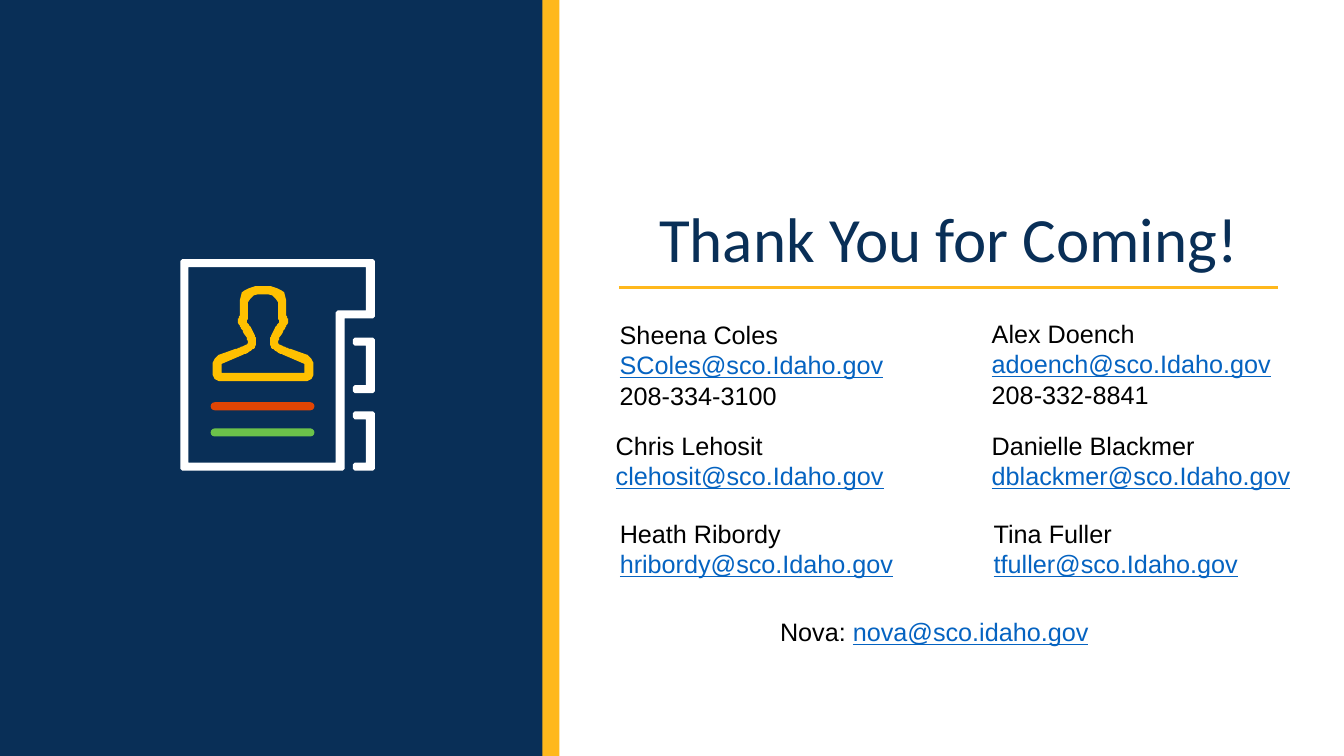
from pptx import Presentation
from pptx.dml.color import RGBColor
from pptx.enum.shapes import MSO_CONNECTOR, MSO_SHAPE
from pptx.enum.text import MSO_ANCHOR, PP_ALIGN
from pptx.oxml.ns import qn
from pptx.util import Emu, Pt
from lxml import etree

PX = 9144  # 100 px to the inch
RECT, PILL = MSO_SHAPE.RECTANGLE, MSO_SHAPE.ROUNDED_RECTANGLE
LINE = MSO_CONNECTOR.STRAIGHT
LEFT, CENTER = PP_ALIGN.LEFT, PP_ALIGN.CENTER
TOP, MIDDLE = MSO_ANCHOR.TOP, MSO_ANCHOR.MIDDLE

NAVY = RGBColor(0x09, 0x2F, 0x57)
GOLD = RGBColor(0xFF, 0xB8, 0x1C)
AMBER = RGBColor(0xFF, 0xC0, 0x00)
RED = RGBColor(0xE1, 0x45, 0x04)
GREEN = RGBColor(0x6C, 0xC2, 0x4A)
WHITE = RGBColor(0xFF, 0xFF, 0xFF)
BLACK = RGBColor(0, 0, 0)
BLUE = RGBColor(0x05, 0x63, 0xC1)

TITLE = "Thank You for Coming!"
# left, top, width, height, lines
PEOPLE = [
    (605, 312, 344, 101, ["Sheena Coles", "SColes@sco.Idaho.gov", "208-334-3100"]),
    (974, 311, 309, 101, ["Alex Doench", "adoench@sco.Idaho.gov", "208-332-8841"]),
    (601, 422, 312, 71, ["Chris Lehosit", "clehosit@sco.Idaho.gov"]),
    (974, 422, 336, 71, ["Danielle Blackmer", "dblackmer@sco.Idaho.gov"]),
    (605, 509, 312, 71, ["Heath Ribordy", "hribordy@sco.Idaho.gov"]),
    (976, 509, 312, 71, ["Tina Fuller", "tfuller@sco.Idaho.gov"]),
    (764, 607, 336, 40, ["Nova: nova@sco.idaho.gov"]),
]

# Outlines: x, y, corner radius
BOOK = [(179, 257, 4), (372, 257, 4), (372, 316, 4), (342, 316, 0),
        (342, 467, 4), (179, 467, 4)]
PAGE = [(187, 265, 0), (363, 265, 0), (363, 308, 0), (333, 308, 4),
        (333, 459, 0), (187, 459, 0)]
TABS = [(335, 390), (408, 467)]
AXIS = 261
# Right half of the bust, from the crown down
BODY = [(284, 284, 21), (284, 313, 3), (287, 319, 5), (282, 327, 4),
        (276, 338, 3), (276, 341, 2), (284, 345, 4), (311, 354, 9),
        (311, 378, 8)]
CORE = [(276, 292, 14), (276, 316, 1), (278, 319, 2), (274, 323, 2),
        (268, 335, 4), (268, 344, 4), (276, 350, 5), (302, 361, 0),
        (302, 370, 0)]
BARS = [(399, RED), (425, GREEN)]


def box(kind, x, y, w, h, color):
    shape = slide.shapes.add_shape(kind, *(Emu(n * PX) for n in (x, y, w, h)))
    shape.shadow.inherit = False
    shape.fill.solid()
    shape.fill.fore_color.rgb = color
    shape.line.fill.background()
    return shape


def write(lines, x, y, w, h, size=18, font="Arial", color=BLACK, align=LEFT,
          anchor=TOP, before=0, space=1.0):
    """Add a text box; words holding an @ are set as addresses."""
    frame = slide.shapes.add_textbox(*(Emu(n * PX) for n in (x, y, w, h))).text_frame
    frame.word_wrap = True
    frame.vertical_anchor = anchor
    for i, line in enumerate(lines):
        para = frame.add_paragraph() if i else frame.paragraphs[0]
        para.alignment = align
        para.space_before = Pt(before)
        para.line_spacing = space
        lead, gap, last = line.rpartition(" ")
        parts = [lead + gap, last] if "@" in last else [line]
        for part in filter(None, parts):
            run = para.add_run()
            run.text = part
            run.font.size = Pt(size)
            run.font.name = font
            mail = "@" in part
            run.font.underline = mail
            run.font.color.rgb = BLUE if mail else color


def curve(points, steps=6):
    """Round each corner of a closed outline by its radius."""
    out = []
    for i, (x, y, r) in enumerate(points):
        if not r:
            out.append((x, y))
            continue
        ends = []
        for px, py, _ in (points[i - 1], points[(i + 1) % len(points)]):
            size = ((px - x) ** 2 + (py - y) ** 2) ** 0.5
            t = min(r / size, 0.5)
            ends.append((x + (px - x) * t, y + (py - y) * t))
        (ax, ay), (bx, by) = ends
        for k in range(steps + 1):
            t = k / steps
            u = 1 - t
            out.append((u * u * ax + 2 * u * t * x + t * t * bx,
                        u * u * ay + 2 * u * t * y + t * t * by))
    return out


def draw(color, *loops):
    first, *rest = [curve(loop) for loop in loops]
    pen = slide.shapes.build_freeform(*first[0], scale=PX)
    pen.add_line_segments(first[1:])
    for loop in rest:
        pen.move_to(*loop[0])
        pen.add_line_segments(loop[1:])
    shape = pen.convert_to_shape()
    shape.shadow.inherit = False
    shape.fill.solid()
    shape.fill.fore_color.rgb = color
    shape.line.fill.background()


def mirror(half):
    return half + [(2 * AXIS - x, y, r) for x, y, r in reversed(half)]


def tab(top, end):
    return [(350, top, 4), (372, top, 4), (372, end, 4), (350, end, 4),
            (350, end - 8, 4), (363, end - 8, 0), (363, top + 8, 0),
            (350, top + 8, 4)]


deck = Presentation()
deck.slide_width, deck.slide_height = Emu(12192000), Emu(750 * PX)
slide = deck.slides.add_slide(deck.slide_layouts[6])

box(RECT, 17, 0, 538, 750, GOLD)
box(RECT, 0, 0, 538, 750, NAVY)
write([TITLE], 586, 198, 710, 84, size=45, font="Calibri", color=NAVY,
      align=CENTER, anchor=MIDDLE, before=10, space=0.9)

rule = slide.shapes.add_connector(LINE, *(Emu(n * PX) for n in (614, 285, 1268, 285)))
rule.line.color.rgb = GOLD
rule.line.width = Pt(2.25)
etree.SubElement(rule._element.spPr, qn("a:effectLst"))

draw(WHITE, BOOK, PAGE)
for top, color in BARS:
    box(PILL, 209, top, 103, 8, color).adjustments[0] = 0.5
for top, end in TABS:
    draw(WHITE, tab(top, end))
draw(AMBER, mirror(BODY), mirror(CORE))

for x, y, w, h, lines in PEOPLE:
    write(lines, x, y, w, h)

deck.save("out.pptx")
